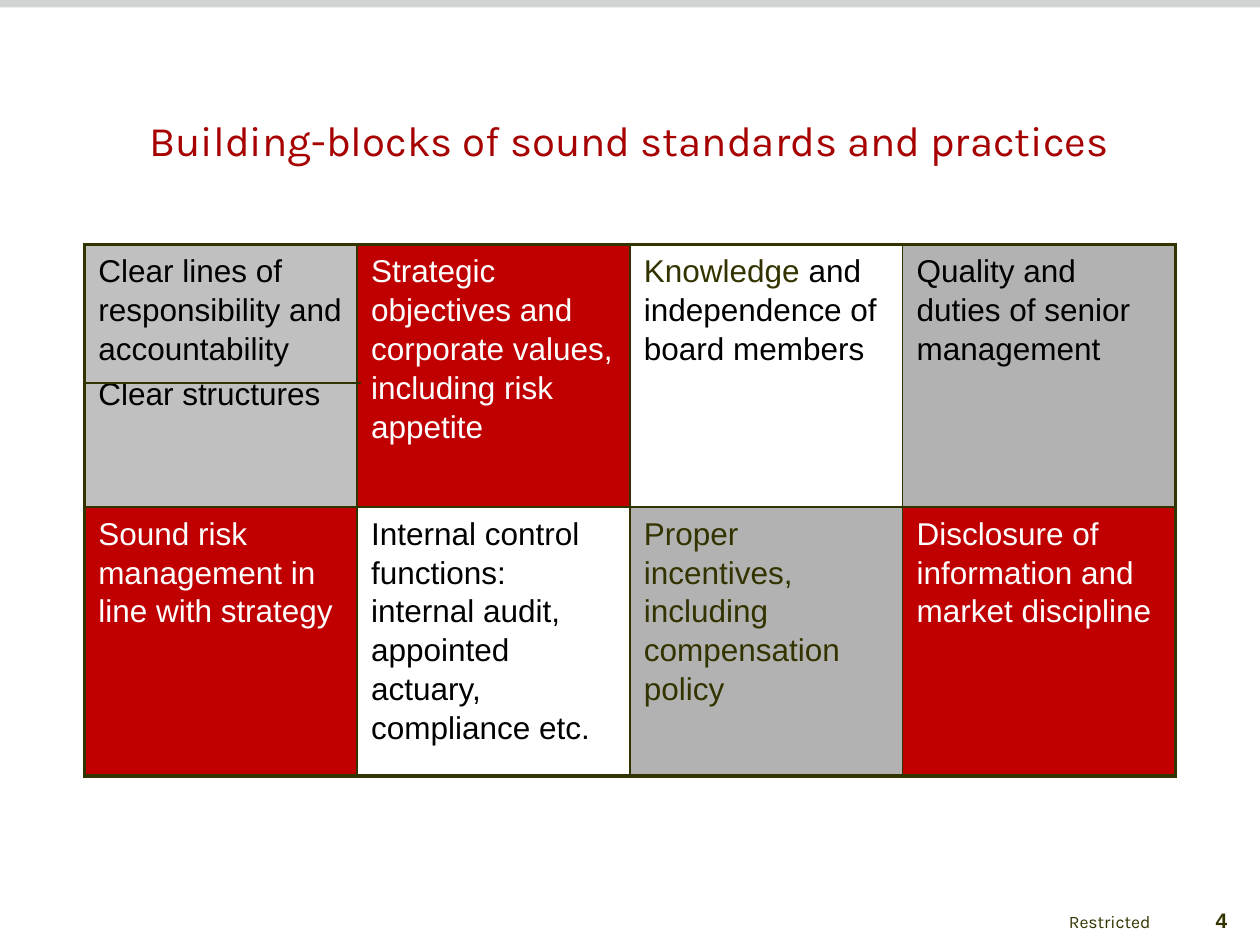
import pptx
import pptx.dml.color
import pptx.enum.shapes
import pptx.enum.text
import pptx.oxml
import pptx.oxml.ns
import pptx.util
from dataclasses import dataclass

Pt = pptx.util.Pt
ALIGN = pptx.enum.text.PP_ALIGN
TOP = pptx.enum.text.MSO_ANCHOR.TOP


@dataclass(frozen=True)
class Theme:
    head: str = "Karla"
    body: str = "Arial"
    title: str = "A60000"
    olive: str = "333300"
    black: str = "000000"
    white: str = "FFFFFF"
    red: str = "C00000"
    gray: str = "B2B2B2"
    pale: str = "C0C0C0"
    strip: str = "D2D4D4"
    big: float = 24
    text: float = 18
    page: float = 12
    small: float = 10
    thick: float = 2.25
    thin: float = 1


T = Theme()

# Each cell: fill, then paragraphs, each a list of (text, colour) runs
BLOCKS = [
    [
        (T.pale, [[("Clear lines of responsibility and accountability", T.black)],
                  [("Clear structures", T.black)]]),
        (T.red, [[("Strategic objectives and corporate values, including risk appetite",
                   T.white)]]),
        (T.white, [[("Knowledge ", T.olive),
                    ("and independence of board members", T.black)]]),
        (T.gray, [[("Quality and duties of senior management", T.black)]]),
    ],
    [
        (T.red, [[("Sound risk management in line with strategy", T.white)]]),
        (T.white, [[("Internal control functions: internal audit, appointed actuary, "
                     "compliance etc.", T.black)]]),
        (T.gray, [[("Proper incentives, including compensation policy", T.olive)]]),
        (T.red, [[("Disclosure of information and market discipline", T.white)]]),
    ],
]


def rgb(code):
    return pptx.dml.color.RGBColor.from_string(code)


def put(item, **values):
    for name, value in values.items():
        setattr(item, name, value)


def place(shape, box):
    put(shape, **dict(zip(("left", "top", "width", "height"), map(Pt, box))))


def write(para, text, size, color, face, bold=False):
    run = para.add_run()
    run.text = text
    put(run.font, size=Pt(size), name=face, bold=bold)
    run.font.color.rgb = rgb(color)


def title(slide, box, text):
    shape = slide.shapes.title
    place(shape, box)
    frame = shape.text_frame
    put(frame, margin_left=0, margin_top=0, margin_right=0, margin_bottom=0,
        vertical_anchor=TOP, word_wrap=True)
    frame.paragraphs[0].alignment = ALIGN.CENTER
    write(frame.paragraphs[0], text, T.big, T.title, T.head)


def label(slide, box, text, align, **style):
    frame = slide.shapes.add_textbox(*map(Pt, box)).text_frame
    put(frame, word_wrap=True, vertical_anchor=TOP)
    frame.paragraphs[0].alignment = align
    write(frame.paragraphs[0], text, color=T.olive, **style)


def strip(slide, box):
    bar = slide.shapes.add_shape(
        pptx.enum.shapes.MSO_SHAPE.RECTANGLE, *map(Pt, box))
    bar.shadow.inherit = False
    bar.fill.solid()
    bar.fill.fore_color.rgb = rgb(T.strip)
    bar.line.fill.background()


def edge(cell, sides):
    """Draw the cell's borders; sides maps L, R, T, B to a width."""
    props = cell._tc.get_or_add_tcPr()
    for spot, (side, width) in enumerate(sides.items()):
        props.insert(spot, pptx.oxml.parse_xml(
            f'<a:ln{side} {pptx.oxml.ns.nsdecls("a")} w="{int(Pt(width))}">'
            f'<a:solidFill><a:srgbClr val="{T.olive}"/></a:solidFill>'
            f'</a:ln{side}>'))


def fill(cell, color, paras):
    put(cell, margin_left=Pt(8), margin_right=Pt(8),
        margin_top=Pt(3.6), margin_bottom=Pt(3.6), vertical_anchor=TOP)
    cell.fill.solid()
    cell.fill.fore_color.rgb = rgb(color)
    frame = cell.text_frame
    for i, runs in enumerate(paras):
        para = frame.add_paragraph() if i else frame.paragraphs[0]
        para.line_spacing = 1.1
        if i:
            para.space_before = Pt(0.2 * T.text)
        for text, tint in runs:
            write(para, text, T.text, tint, T.body)


def grid(slide, box, rows, heights):
    count, wide = len(rows), len(rows[0])
    table = slide.shapes.add_table(count, wide, *map(Pt, box)).table
    put(table, first_row=False, horz_banding=False)
    for col in table.columns:
        col.width = Pt(box[2] / wide)
    for r, row in enumerate(rows):
        table.rows[r].height = Pt(heights[r])
        for c, (color, paras) in enumerate(row):
            cell = table.cell(r, c)
            fill(cell, color, paras)
            outer = {"L": c == 0, "R": c == wide - 1,
                     "T": r == 0, "B": r == count - 1}
            edge(cell, {side: T.thick if out else T.thin
                        for side, out in outer.items()})


def rule(slide, left, top, width):
    line = slide.shapes.add_connector(
        pptx.enum.shapes.MSO_CONNECTOR.STRAIGHT,
        Pt(left), Pt(top), Pt(left + width), Pt(top))
    line.line.color.rgb = rgb(T.olive)
    line.line.width = Pt(T.thin)
    line._element.spPr.append(pptx.oxml.parse_xml(
        f'<a:effectLst {pptx.oxml.ns.nsdecls("a")}/>'))


def blocks(slide, box):
    left, top, width, height = box
    upper = 150
    grid(slide, box, BLOCKS, (upper, height - upper))
    rule(slide, left, top + 79, width / 4 + 2)


def footer(slide, box):
    left, top, width, height = box
    label(slide, (left, top + 2, 129, 20), "Restricted", ALIGN.RIGHT,
          size=T.small, face=T.head)
    label(slide, (left + width - 44, top, 44, height), "4", ALIGN.CENTER,
          size=T.page, face=T.body, bold=True)


def main():
    deck = pptx.Presentation()
    put(deck, slide_width=Pt(720), slide_height=Pt(540))
    slide = deck.slides.add_slide(deck.slide_layouts[5])
    strip(slide, (0, 0, 720, 4.3))
    footer(slide, (535.5, 515, 184.5, 25))
    title(slide, (48, 65.5, 623, 62.5), "Building-blocks of sound standards and practices")
    blocks(slide, (48.2, 139.7, 623.6, 303.8))
    deck.save("out.pptx")


if __name__ == "__main__":
    main()
